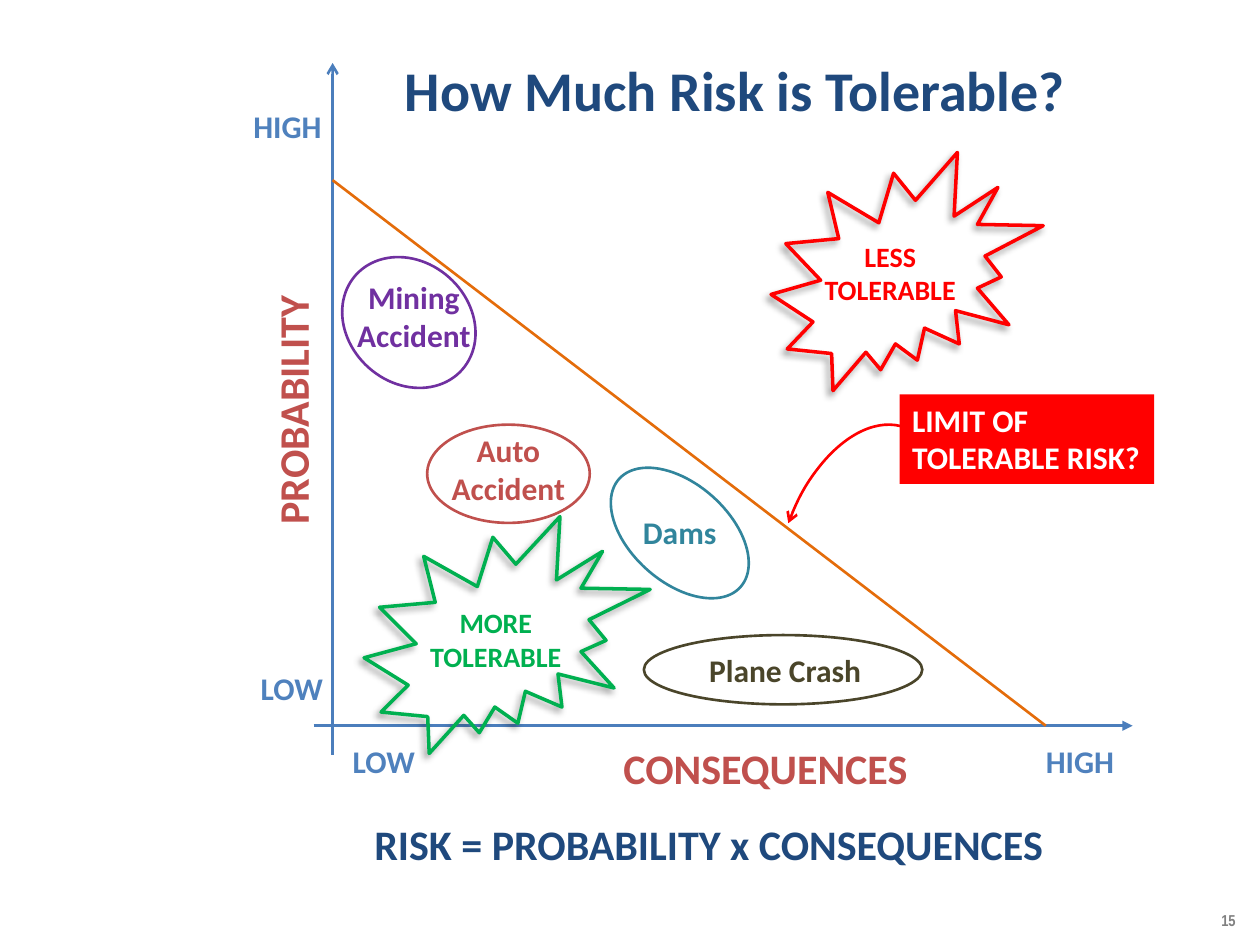
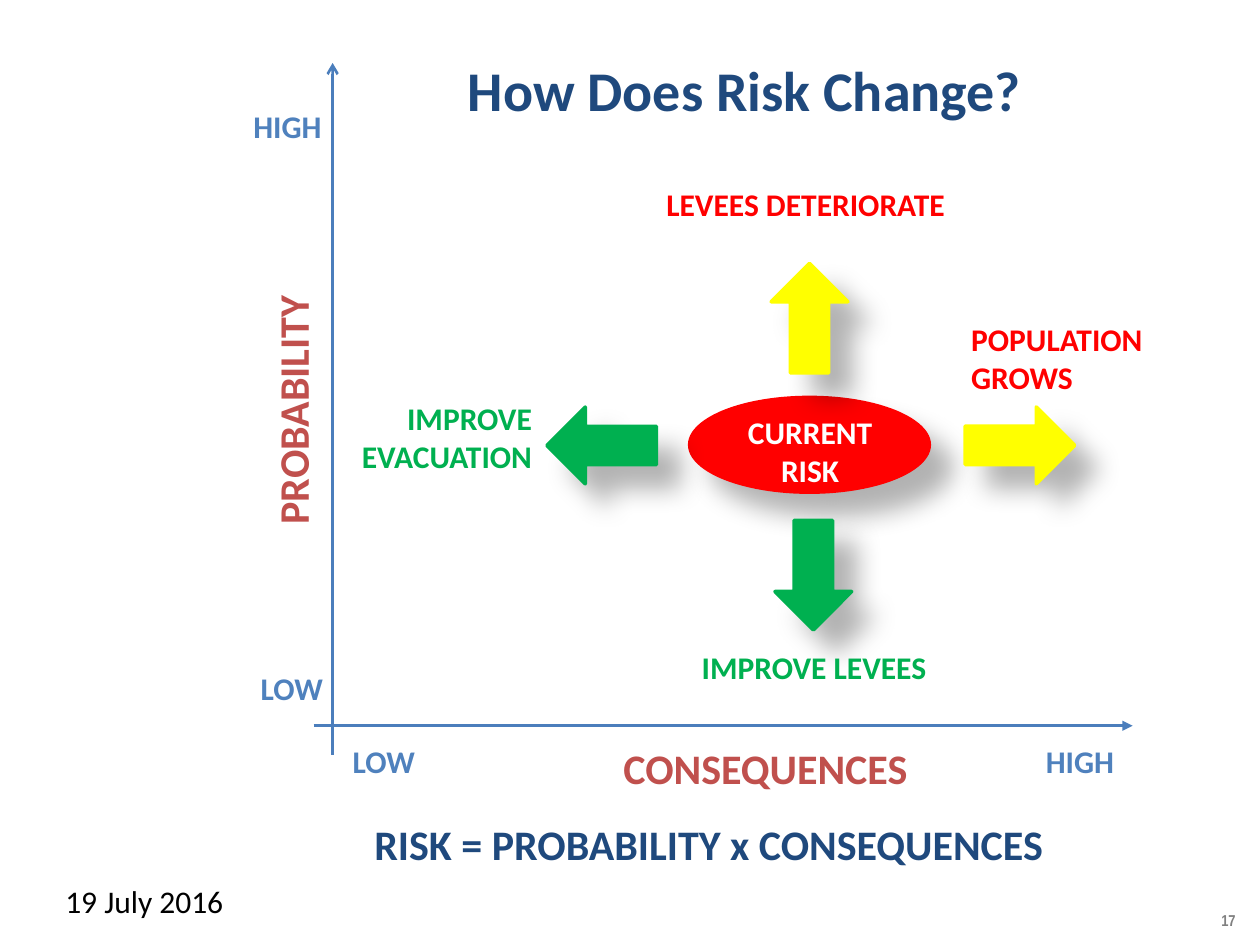
from lxml.etree import SubElement
from pptx import Presentation
from pptx.dml.color import RGBColor
from pptx.enum.shapes import MSO_CONNECTOR, MSO_SHAPE
from pptx.enum.text import MSO_ANCHOR, MSO_AUTO_SIZE, PP_ALIGN
from pptx.oxml.ns import qn
from pptx.util import Inches, Pt

NAVY = RGBColor(0x1F, 0x49, 0x7D)
AXIS_BLUE = RGBColor(0x4B, 0x7E, 0xBC)
LABEL_BLUE = RGBColor(0x4F, 0x81, 0xBD)
BRICK = RGBColor(0xC0, 0x50, 0x4D)
ORANGE = RGBColor(0xE4, 0x6C, 0x0A)
OLIVE = RGBColor(0x4A, 0x45, 0x2A)
TEAL = RGBColor(0x31, 0x85, 0x9C)
PURPLE = RGBColor(0x70, 0x30, 0xA0)
RED = RGBColor(0xFF, 0x00, 0x00)
GREEN = RGBColor(0x00, 0xB0, 0x50)
YELLOW = RGBColor(0xFF, 0xFF, 0x00)
WHITE = RGBColor(0xFF, 0xFF, 0xFF)
GREY = RGBColor(0x80, 0x80, 0x80)
BLACK = RGBColor(0x00, 0x00, 0x00)

LEFT, CENTER, RIGHT = PP_ALIGN.LEFT, PP_ALIGN.CENTER, PP_ALIGN.RIGHT

# Font formats by role
BASE = {"name": "Calibri", "size": Pt(18), "bold": True}
TITLE = BASE | {"size": Pt(32)}
HEADING = BASE | {"size": Pt(24)}
BURST = BASE | {"size": Pt(16)}
DATE = BASE | {"bold": False}
PAGE_NUMBER = {"name": "Arial Narrow", "size": Pt(9), "bold": True}

# Shadows: opacity %, blur pt, distance pt, direction in degrees
TIGHT_SHADOW = (40, 4, 3, 135)
SOFT_SHADOW = (30, 15, 18, 45)

# Shared frame of the chart
ORIGIN_X, ORIGIN_Y = 2.64, 5.76
LINE_WIDTH = 1.5


def inches(*lengths):
    return [Inches(length) for length in lengths]


def write(shape, text, color, style=BASE, align=CENTER, anchor=MSO_ANCHOR.TOP, grow=True):
    frame = shape.text_frame
    frame.word_wrap = True
    frame.vertical_anchor = anchor
    if grow:
        frame.auto_size = MSO_AUTO_SIZE.SHAPE_TO_FIT_TEXT
    paragraph = frame.paragraphs[0]
    paragraph.alignment = align
    run = paragraph.add_run()
    run.text = text
    for attribute, value in style.items():
        setattr(run.font, attribute, value)
    run.font.color.rgb = color


def add_label(slide, box, text, color, rotation=0, **layout):
    label = slide.shapes.add_textbox(*inches(*box))
    label.rotation = rotation
    write(label, text, color, **layout)


def add_arrowhead(line_owner, end, kind):
    ln = line_owner.line._get_or_add_ln()
    SubElement(ln, qn(f"a:{end}"), type=kind)


def add_line(slide, start, finish, color, end=None, kind=None):
    line = slide.shapes.add_connector(MSO_CONNECTOR.STRAIGHT, *inches(*start, *finish))
    line.line.color.rgb = color
    line.line.width = Pt(LINE_WIDTH)
    if end:
        add_arrowhead(line, end, kind)
    SubElement(line._element.spPr, qn("a:effectLst"))


def add_shadow(shape, opacity, blur, distance, direction):
    effects = shape._element.spPr.find(qn("a:effectLst"))
    shadow = SubElement(effects, qn("a:outerShdw"), blurRad=str(Pt(blur)), dist=str(Pt(distance)),
                        dir=str(direction * 60000), algn="ctr", rotWithShape="0")
    color = SubElement(shadow, qn("a:srgbClr"), val=str(BLACK))
    SubElement(color, qn("a:alpha"), val=str(opacity * 1000))


def add_figure(slide, preset, box, fill=None, outline=None, width=LINE_WIDTH, rotation=0, shadow=None):
    figure = slide.shapes.add_shape(preset, *inches(*box))
    figure.rotation = rotation
    figure.shadow.inherit = False
    if fill is None:
        figure.fill.background()
    else:
        figure.fill.solid()
        figure.fill.fore_color.rgb = fill
    if outline is None:
        figure.line.fill.background()
    else:
        figure.line.color.rgb = outline
        figure.line.width = Pt(width)
    if shadow:
        add_shadow(figure, *shadow)
    return figure


def add_risk_chart(presentation, title, title_box, number):
    """Slide with the axes, their labels, the formula, title and page number."""
    slide = presentation.slides.add_slide(presentation.slide_layouts[6])
    add_label(slide, (9.5, 7.1, 0.5, 0.4), number, GREY, style=PAGE_NUMBER,
              anchor=MSO_ANCHOR.MIDDLE, grow=False)
    # Axes
    add_line(slide, (ORIGIN_X, 0.5), (ORIGIN_X, 5.99), AXIS_BLUE, "headEnd", "arrow")
    add_line(slide, (2.49, ORIGIN_Y), (8.99, ORIGIN_Y), AXIS_BLUE, "tailEnd", "triangle")
    add_label(slide, (1.22, 2.91, 2.2, 0.5), "PROBABILITY", BRICK, rotation=270, style=HEADING, align=LEFT)
    add_label(slide, (4.8, 5.84, 2.55, 0.5), "CONSEQUENCES", BRICK, style=HEADING)
    for text, left, top in (("HIGH", 1.63, 0.8), ("LOW", 1.64, 5.26),
                            ("HIGH", 7.92, 5.84), ("LOW", 2.37, 5.84)):
        add_label(slide, (left, top, 1.02, 0.4), text, LABEL_BLUE, align=RIGHT)
    # Title and formula
    add_label(slide, (2.75, 6.45, 5.75, 0.5), "RISK = PROBABILITY x CONSEQUENCES", NAVY, style=HEADING)
    add_label(slide, title_box, title, NAVY, style=TITLE)
    return slide


def build_tolerable_risk(presentation):
    slide = add_risk_chart(presentation, "How Much Risk is Tolerable?", (2.96, 0.39, 5.75, 0.64), "15")
    add_line(slide, (ORIGIN_X, 1.43), (8.3, ORIGIN_Y), ORANGE)

    # Hazards: name, colour, ellipse, rotation, label box, alignment
    hazards = (
        ("Plane Crash", OLIVE, (5.11, 5.04, 2.21, 0.55), 0, (5.53, 5.12, 1.64, 0.4), LEFT),
        ("Auto Accident", BRICK, (3.39, 3.37, 1.29, 0.78), 0, (3.37, 3.37, 1.33, 0.71), CENTER),
        ("Dams", TEAL, (4.75, 3.84, 1.29, 0.78), 41.6, (4.73, 4.02, 1.33, 0.4), CENTER),
        ("Mining Accident", PURPLE, (2.68, 2.08, 1.13, 0.96), 41.6, (2.62, 2.16, 1.33, 0.71), CENTER),
    )
    for name, color, ellipse, rotation, label_box, align in hazards:
        add_figure(slide, MSO_SHAPE.OVAL, ellipse, outline=color, rotation=rotation)
        add_label(slide, label_box, name, color, align=align)

    # Callout to the limit line
    limit = add_figure(slide, MSO_SHAPE.RECTANGLE, (7.14, 3.13, 2.02, 0.71), fill=RED)
    write(limit, "LIMIT OF TOLERABLE RISK?", WHITE, align=LEFT)
    pointer = add_figure(slide, MSO_SHAPE.ARC, (5.8, 3.75, 2.06, 1.22), outline=RED, rotation=289.9)
    add_arrowhead(pointer, "headEnd", "arrow")

    # Bursts on either side of the limit
    bursts = (
        ("MORE TOLERABLE", GREEN, (2.89, 4.1, 2.27, 1.88), (3.26, 4.76, 1.35, 0.64)),
        ("LESS TOLERABLE", RED, (6.12, 1.21, 2.16, 1.89), (6.42, 1.85, 1.29, 0.64)),
    )
    for text, color, burst, label_box in bursts:
        add_figure(slide, MSO_SHAPE.EXPLOSION2, burst, outline=color, width=2, shadow=TIGHT_SHADOW)
        add_label(slide, label_box, text, color, style=BURST)


def build_risk_change(presentation):
    slide = add_risk_chart(presentation, "How Does Risk Change?", (2.37, 0.39, 7.08, 0.64), "17")
    add_label(slide, (0.42, 6.95, 2.33, 0.4), "19 July 2016", BLACK, style=DATE, align=LEFT, grow=False)

    add_figure(slide, MSO_SHAPE.OVAL, (5.46, 3.14, 1.93, 0.78), fill=RED, shadow=SOFT_SHADOW)
    add_label(slide, (5.78, 3.23, 1.3, 0.71), "CURRENT RISK", WHITE)

    # Drivers: arrow left, top, rotation and colour, then label, its colour, box and alignment
    drivers = (
        (6.02, 4.26, 90, GREEN, "IMPROVE LEVEES", GREEN, (5.35, 5.09, 2.22, 0.4), CENTER),
        (4.34, 3.23, 180, GREEN, "IMPROVE EVACUATION", GREEN, (2.1, 3.12, 2.22, 0.71), RIGHT),
        (5.99, 2.22, 270, YELLOW, "LEVEES DETERIORATE", RED, (5.13, 1.42, 2.53, 0.4), CENTER),
        (7.66, 3.23, 0, YELLOW, "POPULATION GROWS", RED, (7.61, 2.49, 1.64, 0.71), LEFT),
    )
    for left, top, rotation, arrow_color, text, text_color, label_box, align in drivers:
        add_figure(slide, MSO_SHAPE.RIGHT_ARROW, (left, top, 0.87, 0.61), fill=arrow_color,
                   outline=arrow_color, width=2, rotation=rotation, shadow=SOFT_SHADOW)
        add_label(slide, label_box, text, text_color, align=align)


def main():
    presentation = Presentation()
    presentation.slide_width, presentation.slide_height = inches(10, 7.5)
    build_tolerable_risk(presentation)
    build_risk_change(presentation)
    presentation.save("out.pptx")


if __name__ == "__main__":
    main()
